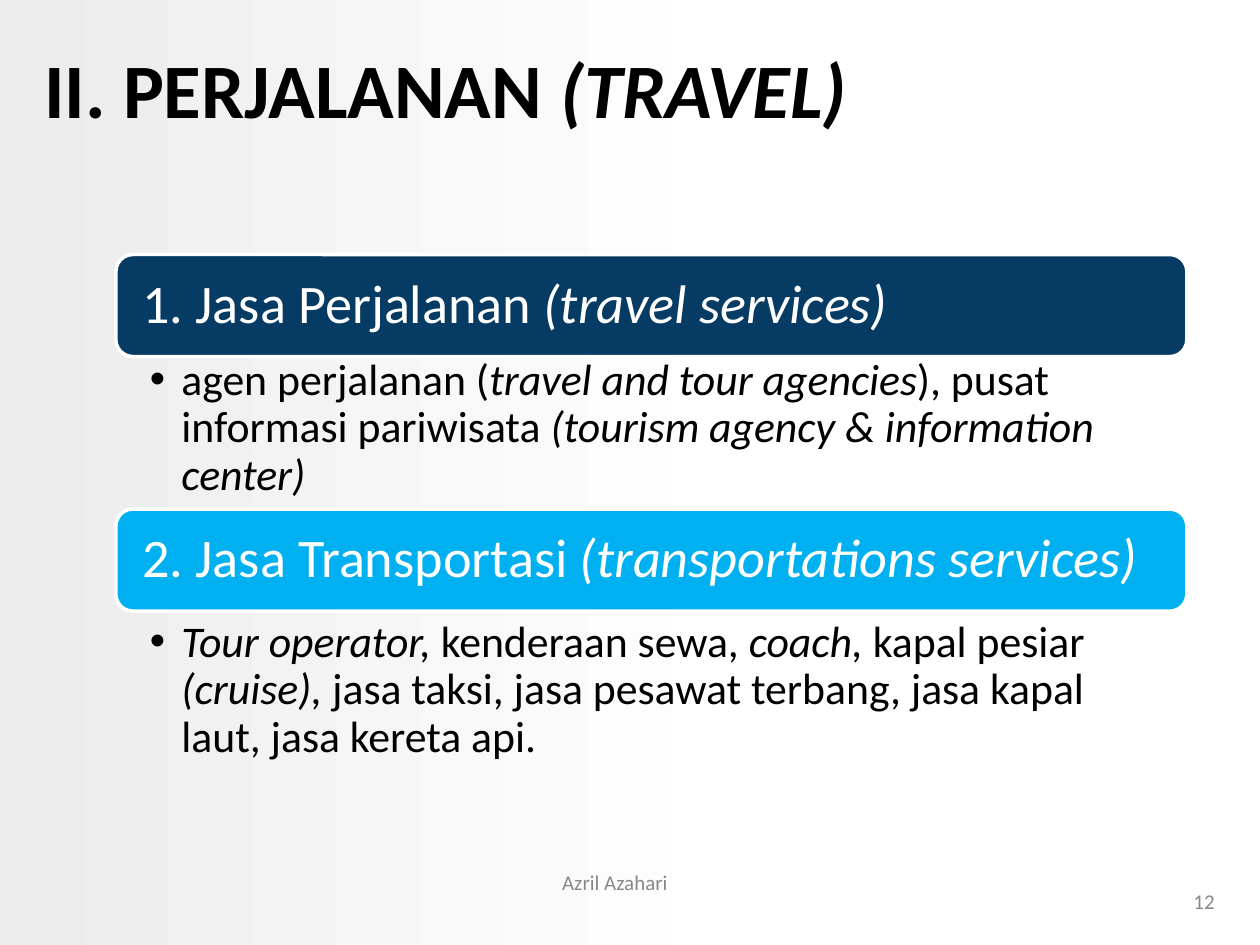
"""Build the travel services slide."""
import dataclasses

import lxml.etree
import pptx
import pptx.dml.color
import pptx.enum.shapes
import pptx.enum.text
import pptx.oxml.ns
import pptx.util

Pt = pptx.util.Pt
RGB = pptx.dml.color.RGBColor.from_string
Align = pptx.enum.text.PP_ALIGN
Anchor = pptx.enum.text.MSO_ANCHOR


@dataclasses.dataclass(frozen=True)
class Theme:
    font: str = "Calibri"
    ink: str = "000000"
    pale: str = "FFFFFF"
    shade: str = "ECECEC"
    gray: str = "888888"
    navy: str = "063C64"
    sky: str = "00B0F0"
    title: int = 44
    head: int = 31
    body: int = 25
    note: int = 12


THEME = Theme()
LEFT, WIDE = 66.24, 612
TOP, STEP = 145.44, 145.44
PILL, LIST = 58.32, 88.56

GROUPS = [
    ("1. Jasa Perjalanan *(travel services)*", THEME.navy, 202.32,
     "agen perjalanan (*travel and tour agencies*), pusat informasi pariwisata "
     "*(tourism agency & information center)*"),
    ("2. Jasa Transportasi *(transportations services)*", THEME.sky, 352.08,
     "*Tour operator, *kenderaan sewa, *coach, *kapal pesiar *(cruise), *"
     "jasa taksi, jasa pesawat terbang, jasa kapal laut, jasa kereta api."),
]


def place(shape, left, top, width, height):
    shape.left, shape.top = Pt(left), Pt(top)
    shape.width, shape.height = Pt(width), Pt(height)


def bullet(para):
    props = para._p.get_or_add_pPr()
    props.set("marL", str(Pt(18)))
    props.set("indent", str(Pt(-18)))
    mark = lxml.etree.SubElement(props, pptx.oxml.ns.qn("a:buChar"))
    mark.set("char", "•")


def write(shape, text, size, color=THEME.ink, bold=False, align=Align.LEFT,
          anchor=Anchor.MIDDLE, pads=(7.2, 3.6, 7.2, 3.6), space=1.0, dot=False):
    frame = shape.text_frame
    frame.word_wrap = True
    frame.auto_size = pptx.enum.text.MSO_AUTO_SIZE.NONE
    frame.vertical_anchor = anchor
    (frame.margin_left, frame.margin_top,
     frame.margin_right, frame.margin_bottom) = map(Pt, pads)
    para = frame.paragraphs[0]
    if dot:
        para.level = 1
        bullet(para)
    para.alignment = align
    para.line_spacing = space
    para.space_before = para.space_after = Pt(0)
    for order, part in enumerate(text.split("*")):
        if part:
            run = para.add_run()
            run.text = part
            run.font.name, run.font.size = THEME.font, Pt(size)
            run.font.bold, run.font.italic = bold, order % 2 == 1
            run.font.color.rgb = RGB(color)


def shade(slide):
    fill = slide.background.fill
    fill.gradient()
    fill.gradient_angle = 0
    for stop, color, spot in zip(fill.gradient_stops,
                                 (THEME.shade, THEME.pale), (0, 0.6)):
        stop.color.rgb = RGB(color)
        stop.position = spot


def pill(slide, text, color, top):
    kind = pptx.enum.shapes.MSO_SHAPE.ROUNDED_RECTANGLE
    shape = slide.shapes.add_shape(kind, Pt(LEFT), Pt(top), Pt(WIDE), Pt(PILL))
    shape.shadow.inherit = False
    shape.fill.solid()
    shape.fill.fore_color.rgb = RGB(color)
    shape.line.color.rgb = RGB(THEME.pale)
    shape.line.width = Pt(2)
    write(shape, text, THEME.head, THEME.pale, pads=(12.24,) * 4, space=0.9)


def note(slide, text, area, align):
    box = slide.shapes.add_textbox(*map(Pt, area))
    write(box, text, THEME.note, THEME.gray, align=align)


def main():
    deck = pptx.Presentation()
    deck.slide_width, deck.slide_height = Pt(720), Pt(540)
    slide = deck.slides.add_slide(deck.slide_layouts[3])
    shade(slide)

    title, *lists = slide.placeholders
    place(title, 18, 5.04, 552.24, 90)
    write(title, "II. PERJALANAN *(TRAVEL)*", THEME.title, bold=True)

    for row, (body, (head, color, top, text)) in enumerate(zip(lists, GROUPS)):
        pill(slide, head, color, TOP + row * STEP)
        place(body, LEFT, top, WIDE, LIST)
        write(body, text, THEME.body, anchor=Anchor.TOP,
              pads=(19.44, 2.16, 13.68, 2.16), space=0.9, dot=True)

    note(slide, "Azril Azahari", (246.24, 486, 210.24, 36), Align.CENTER)
    note(slide, "12", (533.52, 500.4, 167.76, 28.8), Align.RIGHT)
    deck.save("out.pptx")


if __name__ == "__main__":
    main()
